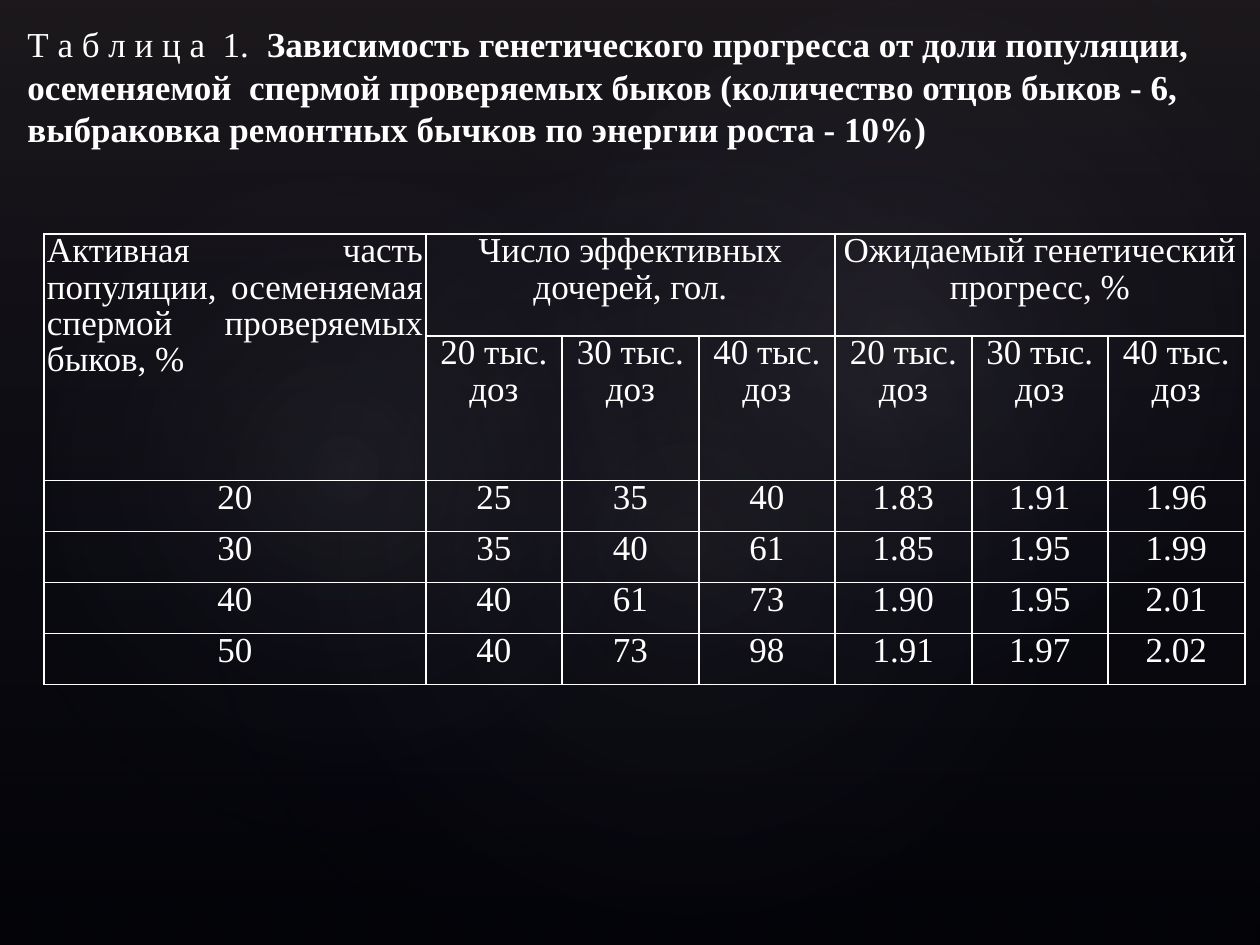
from lxml import etree
from pptx import Presentation
from pptx.dml.color import RGBColor
from pptx.enum.shapes import MSO_SHAPE
from pptx.enum.text import MSO_ANCHOR, PP_ALIGN
from pptx.oxml import parse_xml
from pptx.util import Pt

PX = 914400 / 126
RECTANGLE, OVAL = MSO_SHAPE.RECTANGLE, MSO_SHAPE.OVAL
LEFT, CENTER, JUSTIFY = PP_ALIGN.LEFT, PP_ALIGN.CENTER, PP_ALIGN.JUSTIFY
BOTTOM = MSO_ANCHOR.BOTTOM
NS = "http://schemas.openxmlformats.org/drawingml/2006/main"
WHITE = "FFFFFF"


def px(*values):
    return [round(value * PX) for value in values]


def write(frame, *runs, align=LEFT, spacing=1.0, size=20, font="Times New Roman", color=WHITE):
    """Fill a text frame with one paragraph of (text, bold) runs."""
    frame.word_wrap = True
    paragraph = frame.paragraphs[0]
    paragraph.alignment = align
    paragraph.line_spacing = spacing
    for text, bold in runs:
        run = paragraph.add_run()
        run.text = text
        run.font.size = Pt(size)
        run.font.name = font
        run.font.bold = bold
        run.font.color.rgb = RGBColor.from_string(color)


presentation = Presentation()
presentation.slide_width, presentation.slide_height = px(1260, 945)
slide = presentation.slides.add_slide(presentation.slide_layouts[6])
slide.background.fill.solid()
slide.background.fill.fore_color.rgb = RGBColor.from_string("000000")

# Background: a vertical shade and three soft glows
linear = '<a:lin ang="5400000" scaled="0"/>'
radial = '<a:path path="circle"><a:fillToRect l="50000" t="50000" r="50000" b="50000"/></a:path>'
shade_stops = [(0, "504652", 36), (100, "242852", 10)]
glow_stops = [[(0, "C4BCC6", alpha), (58, "242852", 0)] for alpha in (7, 8)]
for kind, box, rotation, stops, direction in [
    (RECTANGLE, (0, 0, 1260, 945), 0, shade_stops, linear),
    (OVAL, (189, 144, 998, 786), 328.7, glow_stops[0], radial),
    (OVAL, (-38, 161, 764, 617), 294.3, glow_stops[1], radial),
    (OVAL, (451, 16, 893, 655), 328.7, glow_stops[1], radial),
]:
    shape = slide.shapes.add_shape(kind, *px(*box))
    shape.rotation = rotation
    shape.shadow.inherit = False
    shape.line.fill.background()
    stop_xml = "".join(
        f'<a:gs pos="{position * 1000}"><a:srgbClr val="{color}">'
        f'<a:alpha val="{alpha * 1000}"/></a:srgbClr></a:gs>'
        for position, color, alpha in stops
    )
    gradient = parse_xml(
        f'<a:gradFill xmlns:a="{NS}" rotWithShape="1"><a:gsLst>{stop_xml}</a:gsLst>{direction}</a:gradFill>'
    )
    shape.element.spPr.find(f"{{{NS}}}prstGeom").addnext(gradient)

# Table
doses = ["20 тыс. доз", "30 тыс. доз", "40 тыс. доз"]
rows = [
    ["Активная часть популяции, осеменяемая спермой проверяемых быков, %",
     "Число эффективных дочерей, гол.", "", "",
     "Ожидаемый генетический прогресс, %", "", ""],
    ["", *doses, *doses],
    ["20", "25", "35", "40", "1.83", "1.91", "1.96"],
    ["30", "35", "40", "61", "1.85", "1.95", "1.99"],
    ["40", "40", "61", "73", "1.90", "1.95", "2.01"],
    ["50", "40", "73", "98", "1.91", "1.97", "2.02"],
]
column_widths = px(382, *[136, 137] * 3)
row_heights = px(102, 102, *[51] * 4)
frame = slide.shapes.add_table(
    len(rows), len(column_widths), *px(44, 234), sum(column_widths), sum(row_heights)
)
table = frame.table
for column, width in zip(table.columns, column_widths):
    column.width = width
for row, height in zip(table.rows, row_heights):
    row.height = height

for row_index, row in enumerate(rows):
    for column_index, text in enumerate(row):
        cell = table.cell(row_index, column_index)
        cell.margin_left, cell.margin_right, cell.margin_top, cell.margin_bottom = px(3, 3, 0, 0)
        properties = cell._tc.get_or_add_tcPr()
        for side in ("lnL", "lnR", "lnT", "lnB"):
            line = etree.SubElement(properties, f"{{{NS}}}{side}", w=str(Pt(1)))
            fill = etree.SubElement(line, f"{{{NS}}}solidFill")
            etree.SubElement(fill, f"{{{NS}}}srgbClr", val=WHITE)
        cell.fill.background()
        if text:
            align = JUSTIFY if row_index == column_index == 0 else CENTER
            write(cell.text_frame, (text, False), align=align, spacing=0.93)

for first, last in [((0, 0), (1, 0)), ((0, 1), (0, 3)), ((0, 4), (0, 6))]:
    table.cell(*first).merge(table.cell(*last))

# Title, lifted from the bottom of its box by one line
title = slide.shapes.add_textbox(*px(15, 38, 1230, 157)).text_frame
title.vertical_anchor = BOTTOM
title.margin_top, title.margin_bottom = px(0, 46)
write(
    title,
    ("Т а б л и ц а  1.  ", False),
    ("Зависимость генетического прогресса от доли популяции, осеменяемой  спермой "
     "проверяемых быков (количество отцов быков - 6, выбраковка ремонтных бычков "
     "по энергии роста - 10%)", True),
)

presentation.save("out.pptx")
